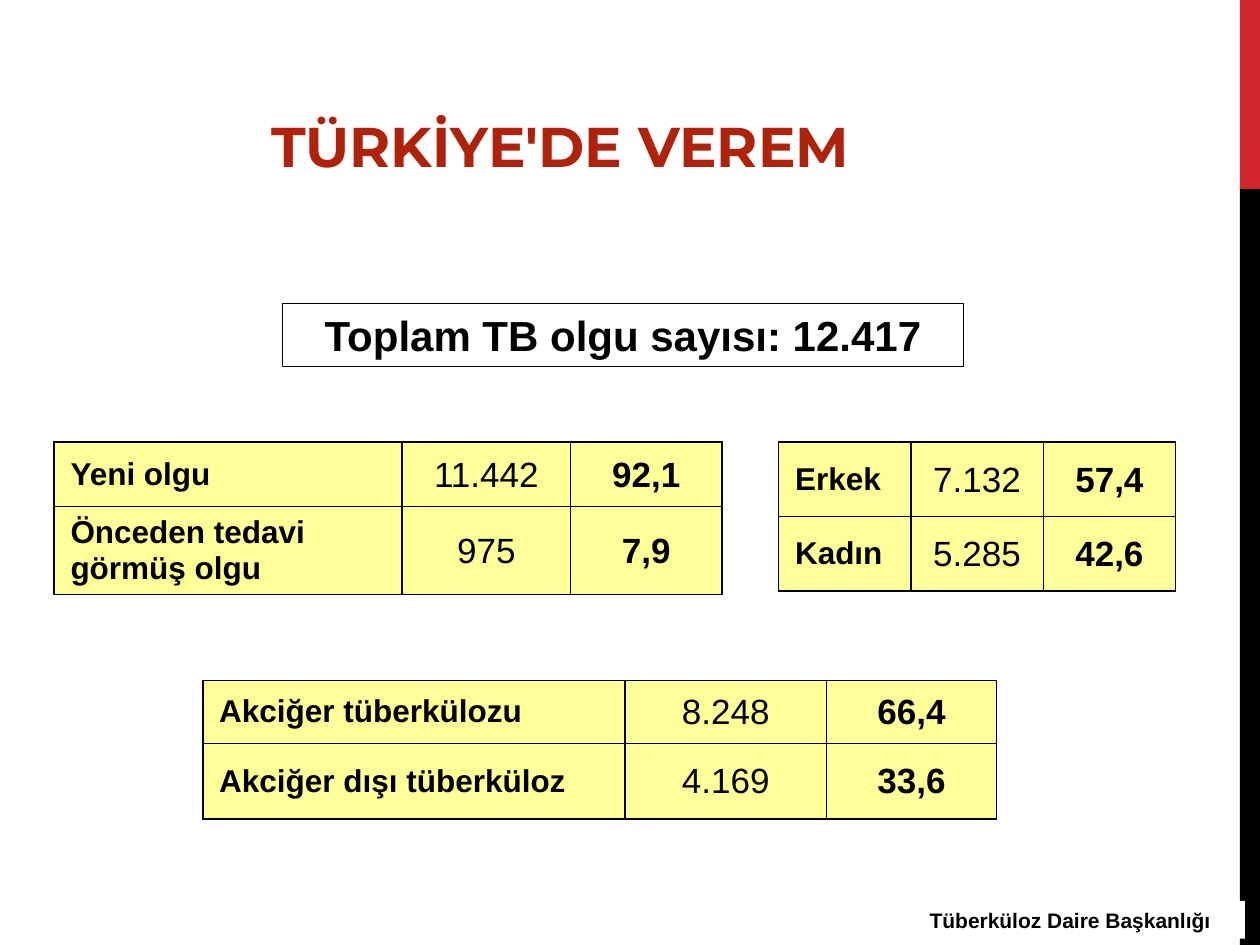
import pptx
import pptx.dml.color
import pptx.enum.shapes
import pptx.enum.text
import pptx.oxml
import pptx.oxml.ns
import pptx.util

Inches, Pt = pptx.util.Inches, pptx.util.Pt
ALIGN, ANCHOR = pptx.enum.text.PP_ALIGN, pptx.enum.text.MSO_ANCHOR

# Content
TITLE = "TÜRKİYE'DE VEREM"
TOTAL = "Toplam TB olgu sayısı: 12.417"
SOURCE = "Tüberküloz Daire Başkanlığı"
TABLES = [
    {"at": (6.18, 3.51), "columns": (1.05, 1.05, 1.05), "heights": (0.59, 0.59),
     "rows": [("Erkek", "7.132", "57,4"), ("Kadın", "5.285", "42,6")]},
    {"at": (1.61, 5.4), "columns": (3.35, 1.6, 1.35), "heights": (0.5, 0.6),
     "rows": [("Akciğer tüberkülozu", "8.248", "66,4"),
              ("Akciğer dışı tüberküloz", "4.169", "33,6")]},
    {"at": (0.43, 3.51), "columns": (2.76, 1.34, 1.2), "heights": (0.51, 0.7),
     "rows": [("Yeni olgu", "11.442", "92,1"),
              ("Önceden tedavi görmüş olgu", "975", "7,9")]},
]
# Size, bold, alignment and margins (left, top, right, bottom) of each column
LABEL_MARGINS, NUMBER_MARGINS = (0.13, 0.05, 0.13, 0.05), (0.01, 0.01, 0.01, 0)
COLUMN_STYLES = [
    (18, True, ALIGN.LEFT, LABEL_MARGINS),
    (20, False, ALIGN.CENTER, NUMBER_MARGINS),
    (20, True, ALIGN.CENTER, NUMBER_MARGINS),
]
BLACK, WHITE, RED, TITLE_RED, YELLOW = "000000", "FFFFFF", "D1282E", "AF220B", "FFFF99"


def color(value):
    return pptx.dml.color.RGBColor.from_string(value)


def fill_with(target, value):
    target.fill.solid()
    target.fill.fore_color.rgb = color(value)


def write(frame, text, size, bold=True, align=ALIGN.CENTER, font="Arial", ink=BLACK):
    frame.word_wrap = True
    page_paragraph = frame.paragraphs[0]
    page_paragraph.alignment = align
    span = page_paragraph.add_run()
    span.text = text
    span.font.size, span.font.bold, span.font.name = Pt(size), bold, font
    span.font.color.rgb = color(ink)


def add_rectangle(page, place, fill, line=None):
    box = page.shapes.add_shape(pptx.enum.shapes.MSO_SHAPE.RECTANGLE, *map(Inches, place))
    box.shadow.inherit = False
    fill_with(box, fill)
    if line:
        box.line.color.rgb = color(line)
        box.line.width = Pt(0.75)
    else:
        box.line.fill.background()
    return box


def add_borders(cell):
    properties = cell._tc.get_or_add_tcPr()
    for index, side in enumerate(("lnL", "lnR", "lnT", "lnB")):
        properties.insert(index, pptx.oxml.parse_xml(
            f'<a:{side} {pptx.oxml.ns.nsdecls("a")} w="{Pt(1)}">'
            f'<a:solidFill><a:srgbClr val="{BLACK}"/></a:solidFill></a:{side}>'))


def add_case_table(page, at, columns, heights, rows):
    place = (*at, sum(columns), sum(heights))
    table = page.shapes.add_table(len(rows), len(columns), *map(Inches, place)).table
    table.first_row = table.horz_banding = False
    for column, width in zip(table.columns, columns):
        column.width = Inches(width)
    for row, height, texts in zip(table.rows, heights, rows):
        row.height = Inches(height)
        for cell, text, (size, bold, align, margins) in zip(row.cells, texts, COLUMN_STYLES):
            fill_with(cell, YELLOW)
            add_borders(cell)
            cell.vertical_anchor = ANCHOR.MIDDLE
            (cell.margin_left, cell.margin_top,
             cell.margin_right, cell.margin_bottom) = map(Inches, margins)
            write(cell.text_frame, text, size, bold, align)


deck = pptx.Presentation()
deck.slide_width, deck.slide_height = Inches(10), Inches(7.5)
page = deck.slides.add_slide(deck.slide_layouts[5])

# Side band
add_rectangle(page, (9.84, 0, 0.16, 1.5), RED)
add_rectangle(page, (9.84, 1.5, 0.16, 6), BLACK)

# Title
title = page.shapes.title
title.left, title.top, title.width, title.height = map(Inches, (1.25, 0.84, 6.4, 0.63))
title.text_frame.auto_size = pptx.enum.text.MSO_AUTO_SIZE.NONE
title.text_frame.vertical_anchor = ANCHOR.MIDDLE
write(title.text_frame, TITLE, 32, font="Montserrat", ink=TITLE_RED)

# Total and tables
total = add_rectangle(page, (2.24, 2.41, 5.41, 0.5), WHITE, BLACK)
write(total.text_frame, TOTAL, 24)
for case_table in TABLES:
    add_case_table(page, **case_table)

# Source
source = add_rectangle(page, (7.28, 7.15, 2.6, 0.3), WHITE)
write(source.text_frame, SOURCE, 12, align=ALIGN.LEFT)

deck.save("out.pptx")
